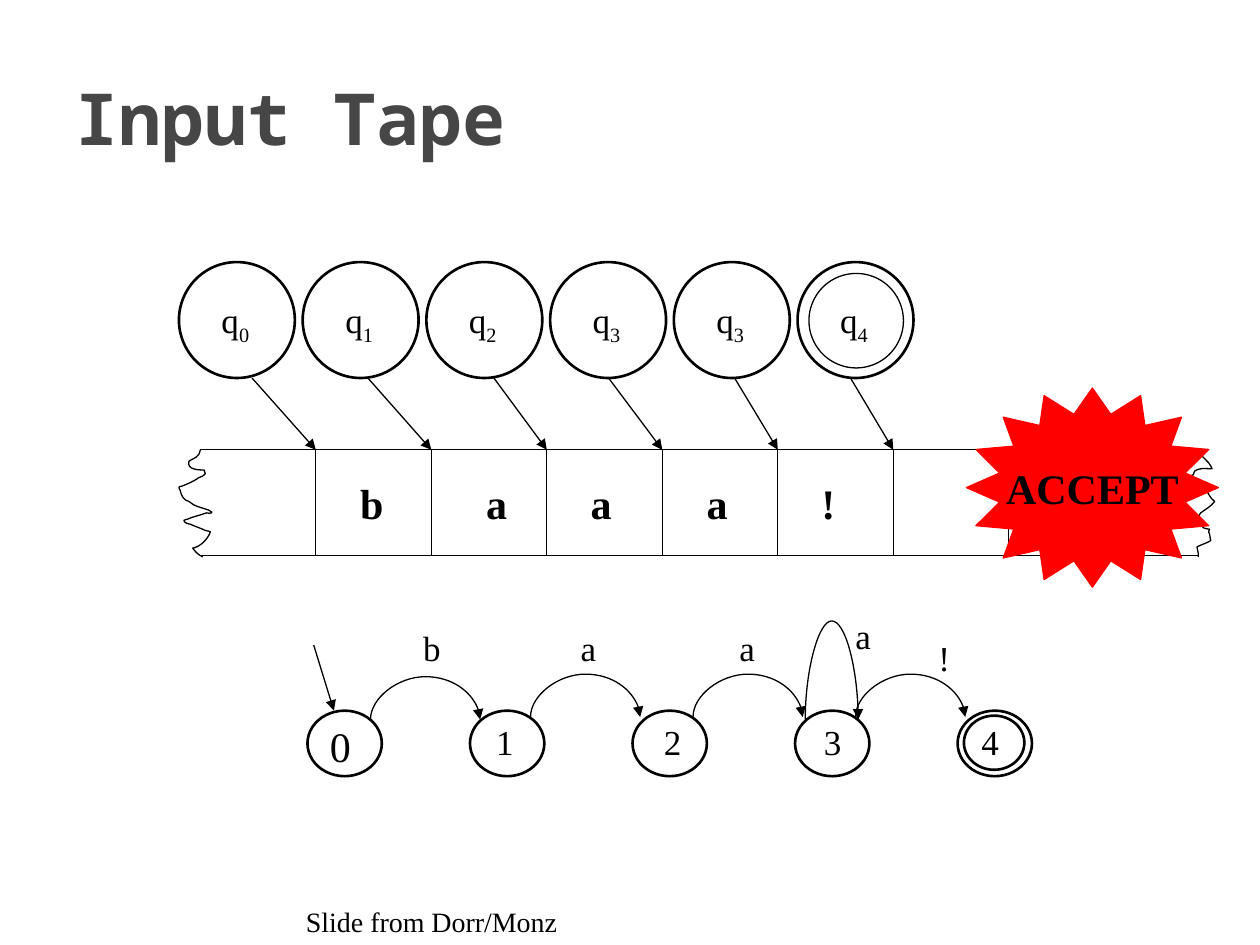
from lxml.etree import SubElement
from pptx import Presentation
from pptx.dml.color import RGBColor
from pptx.enum.shapes import MSO_CONNECTOR as CONNECTOR, MSO_SHAPE as SHAPE
from pptx.enum.text import MSO_ANCHOR as ANCHOR, PP_ALIGN as ALIGN
from pptx.oxml.ns import qn
from pptx.util import Inches, Pt

COLORS = {"title": "464646", "ink": "000000", "accept": "FF0000"}
SERIF = "Times New Roman"
THIN, THICK = 0.75, 1.5

# Torn tape ends, in hundredths of an inch from the tape's top corner:
# a start point followed by Bezier triples.
LEFT_TEAR = [
    (0, 0), (-1, 6), (-4, 6), (-9, 9), (-11, 16), (-1, 16), (3, 16),
    (3, 17), (4, 18), (4, 19), (3, 21), (1, 21), (-1, 22),
    (-5, 25), (-10, 27), (-15, 29), (-16, 29), (-17, 29), (-17, 30),
    (-17, 31), (-16, 32), (-16, 32), (-15, 37), (-13, 40), (-9, 41),
    (-5, 45), (2, 46), (7, 48), (7, 49), (10, 49), (9, 50),
    (8, 51), (6, 50), (5, 50), (0, 52), (-6, 53), (-10, 55),
    (-11, 55), (-13, 56), (-13, 56), (-13, 58), (-9, 59), (-8, 59),
    (-4, 61), (0, 62), (4, 64), (5, 64), (8, 65), (8, 65),
    (6, 71), (0, 77), (-6, 78), (-4, 81), (-2, 83), (2, 85),
]
RIGHT_TEAR = [
    (-1, 0), (2, 4), (5, 7), (8, 10), (9, 11), (11, 15), (11, 15),
    (4, 15), (2, 14), (-3, 17), (-3, 18), (-3, 19), (-4, 20),
    (-4, 20), (-6, 20), (-6, 21), (-6, 23), (-4, 23), (-3, 24),
    (1, 28), (2, 28), (5, 30), (8, 34), (9, 38), (13, 41),
    (10, 45), (6, 47), (2, 50), (0, 53), (0, 52), (1, 56),
    (4, 63), (3, 62), (9, 63), (8, 66), (8, 64), (9, 67),
    (9, 69), (10, 72), (10, 72), (7, 74), (3, 75), (-1, 77),
    (0, 83), (0, 80), (0, 85),
]


def rgb(name):
    return RGBColor.from_string(COLORS[name])


def write(shape, runs, size, color="ink", font=SERIF, bold=False, wrap=True):
    """Fill the shape with one paragraph; the second run, if any, is a subscript."""
    shape.text_frame.word_wrap = wrap
    paragraph = shape.text_frame.paragraphs[0]
    for index, text in enumerate(runs):
        run = paragraph.add_run()
        run.text = text
        for name, value in {"name": font, "size": Pt(size), "bold": bold}.items():
            setattr(run.font, name, value)
        run.font.color.rgb = rgb(color)
        if index:
            run.font._element.set("baseline", "-25000")
    return paragraph


def add_label(shapes, left, top, width, height, runs, size, **style):
    box = shapes.add_textbox(Inches(left), Inches(top), Inches(width), Inches(height))
    write(box, runs, size, **style)
    return box


def outline(shape, width, color="ink"):
    shape.line.color.rgb = rgb(color)
    shape.line.width = Pt(width)


def style_connector(connector, arrow):
    outline(connector, THIN)
    properties = connector._element.spPr
    if arrow:
        SubElement(properties.find(qn("a:ln")), qn("a:tailEnd"), type="triangle")
    SubElement(properties, qn("a:effectLst"))


def add_line(shapes, x1, y1, x2, y2, arrow=False):
    connector = shapes.add_connector(
        CONNECTOR.STRAIGHT, Inches(x1), Inches(y1), Inches(x2), Inches(y2))
    style_connector(connector, arrow)


def add_arc(shapes, left, y, span, bend):
    """Curved arrow that rises from (left, y) and lands span inches to the right."""
    depth = Pt(0.125)
    center, half = Inches(left + span / 2), Inches(span / 2)
    connector = shapes.add_connector(
        CONNECTOR.CURVE, center, Inches(y) + half, center + depth, Inches(y) - half)
    connector._element.spPr.find(qn("a:xfrm")).set("rot", str(90 * 60000))
    geometry = connector._element.spPr.find(qn("a:prstGeom"))
    guides = geometry.find(qn("a:avLst"))
    if guides is None:
        guides = SubElement(geometry, qn("a:avLst"))
    SubElement(guides, qn("a:gd"), name="adj1", fmla=f"val {bend * 100000}")
    style_connector(connector, arrow=True)


def add_ellipse(shapes, left, top, width, height, weight):
    ellipse = shapes.add_shape(
        SHAPE.OVAL, Inches(left), Inches(top), Inches(width), Inches(height))
    ellipse.shadow.inherit = False
    ellipse.fill.background()
    outline(ellipse, weight)


def add_tear(shapes, left, top, points):
    builder = shapes.build_freeform(*points[0], scale=Inches(0.01))
    builder.add_line_segments(points[1:], close=False)
    tear = builder.convert_to_shape(Inches(left), Inches(top))
    segments = list(tear._element.iter(qn("a:lnTo")))
    for start in range(0, len(segments), 3):
        curve = SubElement(segments[start].getparent(), qn("a:cubicBezTo"))
        for segment in segments[start:start + 3]:
            curve.append(segment[0])
            segment.getparent().remove(segment)
    tear.shadow.inherit = False
    tear.fill.background()
    outline(tear, THIN)


def add_title(slide, left, top, width, height):
    title = add_label(slide.shapes, left, top, width, height, ["Input Tape"], 41,
                      color="title", font="Noto Sans Mono", bold=True)
    title.text_frame.vertical_anchor = ANCHOR.MIDDLE


def add_tape(shapes, left, top, width, height):
    cell = 11 / 12
    for y in (top, top + height):
        add_line(shapes, left, y, left + width, y)
    for index in range(1, 9):
        x = left + index * cell
        add_line(shapes, x, top, x, top + height)
    add_tear(shapes, left, top, LEFT_TEAR)
    add_tear(shapes, left + width, top, RIGHT_TEAR)
    symbols = [("b", 1.17, 0.41), ("a", 2.17, 0.41), ("a", 3, 0.33),
               ("a", 3.92, 0.33), ("!", 4.83, 0.33)]
    for symbol, offset, box_width in symbols:
        add_label(shapes, left + offset, top + 0.17, box_width, 0.5, [symbol], 24, bold=True)
    # Reading-head arrows run from the state circles to the cell borders.
    for index, offset in enumerate([0.41, 1.33, 2.33, 3.24, 4.24, 5.16], start=1):
        add_line(shapes, left + offset, top - 0.57, left + index * cell, top, arrow=True)


def add_state_row(shapes, left, top, width, size):
    states = "012334"
    pitch = (width - size) / (len(states) - 1)
    for index, number in enumerate(states):
        x = left + index * pitch
        add_ellipse(shapes, x, top, size, size, THICK)
        add_label(shapes, x + 0.24, top + 0.24, 0.43, 0.43, ["q", number], 20, wrap=False)
    add_ellipse(shapes, x + 0.09, top + 0.09, size - 0.17, size - 0.17, THIN)


def add_automaton(shapes, left, top):
    pitch, width, height = 1.29, 0.59, 0.52
    for index, offset in enumerate([0.08, 0.11, 0.15, 0.13, 0.09]):
        x = left + index * pitch
        add_ellipse(shapes, x, top, width, height, THICK)
        add_label(shapes, x + offset, top + 0.03, 0.43, 0.43 if index else 0.5,
                  [str(index)], 20 if index else 24)
    add_ellipse(shapes, x + 0.05, top + 0.04, 0.48, 0.43, THICK)
    add_line(shapes, left + 0.05, top - 0.52, left + 0.21, top, arrow=True)

    transitions = [("b", 0.82, -0.72, 0.5, 0.07), ("a", 2.07, -0.72, 0.48, 0.05),
                   ("a", 3.33, -0.72, 0.48, 0.05), ("!", 4.91, -0.64, 0.48, 0.05)]
    for index, (symbol, dx, dy, arc_x, arc_y) in enumerate(transitions):
        add_arc(shapes, left + index * pitch + arc_x, top + arc_y, 0.87, -215)
        add_label(shapes, left + dx, top + dy, 0.43, 0.43, [symbol], 20)
    add_arc(shapes, left + 3.95, top + 0.07, 0.42, -496)
    add_label(shapes, left + 4.25, top - 0.81, 0.43, 0.43, ["a"], 20)


def add_accept_star(slide, left, top, width, height):
    star = slide.shapes.add_shape(
        SHAPE.STAR_16_POINT, Inches(left), Inches(top), Inches(width), Inches(height))
    star.shadow.inherit = False
    star.fill.solid()
    star.fill.fore_color.rgb = rgb("accept")
    outline(star, THIN, "accept")
    write(star, ["ACCEPT"], 24, bold=True, wrap=False).alignment = ALIGN.CENTER
    star.text_frame.vertical_anchor = ANCHOR.MIDDLE


def main():
    presentation = Presentation()
    presentation.slide_width, presentation.slide_height = Inches(10), Inches(7.5)
    slide = presentation.slides.add_slide(presentation.slide_layouts[6])
    add_title(slide, 0.5, 0.3, 9, 1.25)
    tape_group = slide.shapes.add_group_shape().shapes
    add_tape(tape_group, 1.59, 3.57, 7.92, 0.84)
    add_state_row(tape_group, 1.42, 2.08, 5.83, 0.92)
    add_automaton(slide.shapes.add_group_shape().shapes, 2.44, 5.64)
    add_accept_star(slide, 7.67, 3.08, 2, 1.58)
    add_label(slide.shapes, 2.33, 7.13, 2.2, 0.37, ["Slide from Dorr/Monz"], 16, wrap=False)
    presentation.save("out.pptx")


if __name__ == "__main__":
    main()
